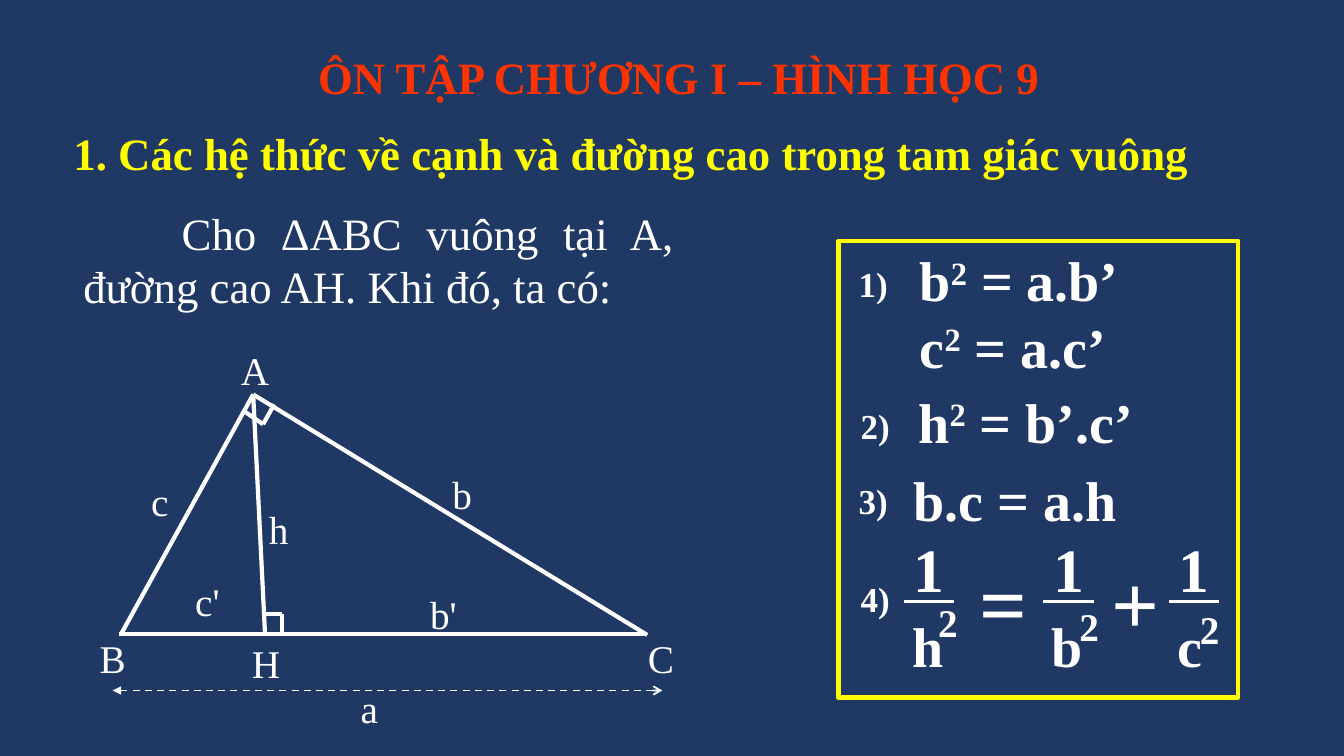
from lxml import etree
from pptx import Presentation
from pptx import util as u
from pptx.dml.color import RGBColor
from pptx.enum import dml, shapes, text
from pptx.oxml import ns

NAVY = RGBColor(0x20, 0x38, 0x64)
WHITE = RGBColor(0xFF, 0xFF, 0xFF)
YELLOW = RGBColor(0xFF, 0xFF, 0x00)
RED = RGBColor(0xFF, 0x33, 0x00)
FONT = "Times New Roman"

FORMULAS = [
    (22.93, 6.07, "b^2^ = a.b’"),
    (22.93, 7.75, "c^2^ = a.c’"),
    (22.9, 9.63, "h^2^ = b’.c’"),
    (22.78, 11.61, "b.c = a.h"),
]
NUMBERS = [(21.39, 6.48), (21.44, 10.06), (21.39, 11.96), (21.44, 14.43)]
FRACTIONS = [
    (22.78, "h", 0.61, 14.94),
    (26.29, "b", 0.66, 15.06),
    (29.46, "c", 0.53, 15.14),
]
OPERATORS = [(24.43, "="), (27.76, "+")]
A, B, C, H = (6.38, 9.94), (3.05, 15.98), (16.31, 16), (6.68, 16)
SIDES = [
    (A, B),
    (A, C),
    ((16.23, 15.98), (3, 15.98)),
    (A, H),
]
RIGHT_ANGLES = [
    [(6.6, 15.47), (7.11, 15.47), (7.11, 15.98)],
    [(6.91, 10.19), (6.63, 10.69), (6.15, 10.36)],
]
LABELS = [
    (5.82, 8.61, 1.24, "A"),
    (2.26, 15.85, 1.17, "B"),
    (16.08, 15.85, 1.17, "C"),
    (6.1, 15.98, 1.24, "H"),
    (3.56, 11.91, 0.97, "c"),
    (11.15, 11.73, 1.02, "b"),
    (10.59, 14.76, 1.19, "b'"),
    (4.67, 14.43, 1.14, "c'"),
    (6.53, 12.6, 1.02, "h"),
    (8.84, 17.12, 0.97, "a"),
]


def add_text(slide, x, y, width, words, size, color=WHITE, bold=True,
             wrap=True, align=None, indent=0):
    height = size * 0.045
    box = slide.shapes.add_textbox(u.Cm(x), u.Cm(y), u.Cm(width), u.Cm(height))
    box.text_frame.word_wrap = wrap
    paragraph = box.text_frame.paragraphs[0]
    paragraph.alignment = align
    if indent:
        paragraph._p.get_or_add_pPr().set("indent", str(u.Cm(indent)))
    font = paragraph.font
    font.name, font.size, font.bold = FONT, u.Pt(size), bold
    font.color.rgb = color
    for position, part in enumerate(words.split("^")):
        run = paragraph.add_run()
        run.text = part
        if position % 2:
            run._r.get_or_add_rPr().set("baseline", "30000")


def add_line(slide, start, end, width=3.0):
    ends = [u.Cm(value) for value in (*start, *end)]
    line = slide.shapes.add_connector(shapes.MSO_CONNECTOR.STRAIGHT, *ends)
    line.line.color.rgb = WHITE
    line.line.width = u.Pt(width)
    etree.SubElement(line._element.spPr, ns.qn("a:effectLst"))
    return line


def add_dimension(slide, start, end):
    span = add_line(slide, start, end, 1.25)
    span.line.dash_style = dml.MSO_LINE.DASH
    outline = span.line._get_or_add_ln()
    for tag, kind in (("a:headEnd", "triangle"), ("a:tailEnd", "arrow")):
        etree.SubElement(outline, ns.qn(tag), type=kind)


def add_fraction(slide, x, base, exponent_shift, exponent_y):
    add_text(slide, x, 13.26, 2.03, "1", 44)
    add_text(slide, x - 0.04, 15.28, 2.77, base, 40)
    add_text(slide, x + exponent_shift, exponent_y, 1.4, "2", 28)
    add_line(slide, (x, 15.16), (x + 1.27, 15.16), 2.25)


def add_formulas(slide):
    frame = slide.shapes.add_shape(
        shapes.MSO_SHAPE.RECTANGLE,
        u.Cm(21.13), u.Cm(6.07), u.Cm(10.08), u.Cm(11.51))
    frame.shadow.inherit = False
    frame.fill.background()
    frame.line.color.rgb = YELLOW
    frame.line.width = u.Pt(3)
    for x, y, formula in FORMULAS:
        add_text(slide, x, y, 7, formula, 40)
    for number, (x, y) in enumerate(NUMBERS, 1):
        add_text(slide, x, y, 2.54, f"{number})", 25)
    for fraction in FRACTIONS:
        add_fraction(slide, *fraction)
    for x, operator in OPERATORS:
        add_text(slide, x, 13.74, 1.65, operator, 60)


def add_triangle(slide):
    for start, end in SIDES:
        add_line(slide, start, end)
    for first, corner, last in RIGHT_ANGLES:
        add_line(slide, first, corner)
        add_line(slide, corner, last)
    for x, y, width, label in LABELS:
        add_text(slide, x, y, width, label, 28, bold=False, wrap=False)
    add_dimension(slide, (2.84, 17.4), (16.69, 17.4))


def main():
    deck = Presentation()
    deck.slide_width, deck.slide_height = u.Cm(33.87), u.Cm(19.05)
    slide = deck.slides.add_slide(deck.slide_layouts[6])
    slide.background.fill.solid()
    slide.background.fill.fore_color.rgb = NAVY

    add_formulas(slide)
    add_text(slide, 7.4, 1.14, 19.41, "ÔN TẬP CHƯƠNG I – HÌNH HỌC 9", 32, RED,
             align=text.PP_ALIGN.CENTER)
    add_text(slide, 1.6, 3.05, 28.85,
             "1. Các hệ thức về cạnh và đường cao trong tam giác vuông",
             32, YELLOW, wrap=False)
    add_text(slide, 1.85, 5.05, 15.39,
             "Cho ΔABC vuông tại A, đường cao AH. Khi đó, ta có:",
             32, bold=False, align=text.PP_ALIGN.JUSTIFY, indent=2.48)
    add_triangle(slide)
    deck.save("out.pptx")


if __name__ == "__main__":
    main()
